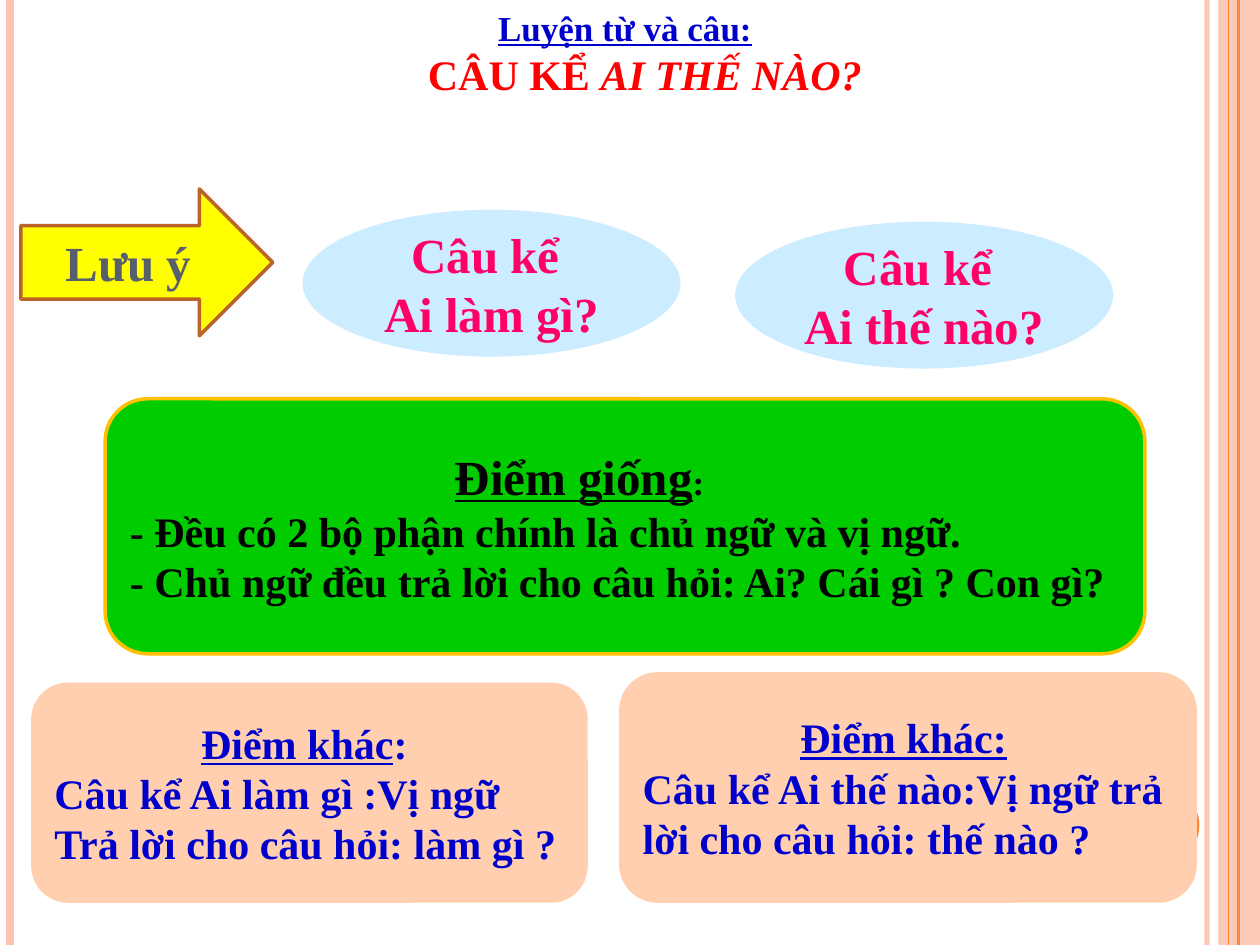
from lxml import etree
from pptx import Presentation
from pptx.dml.color import RGBColor
from pptx.enum.shapes import MSO_CONNECTOR, MSO_SHAPE
from pptx.enum.text import MSO_ANCHOR, MSO_AUTO_SIZE, PP_ALIGN
from pptx.oxml.ns import qn
from pptx.util import Cm, Pt

STRAIGHT = MSO_CONNECTOR.STRAIGHT
RECT, OVAL = MSO_SHAPE.RECTANGLE, MSO_SHAPE.OVAL
ROUND, ARROW = MSO_SHAPE.ROUNDED_RECTANGLE, MSO_SHAPE.RIGHT_ARROW
MIDDLE, TOP = MSO_ANCHOR.MIDDLE, MSO_ANCHOR.TOP
LEFT, CENTER = PP_ALIGN.LEFT, PP_ALIGN.CENTER

THEME = {
    "font": "Times New Roman",
    "small": 20, "normal": 24, "large": 28,
    "orange": "FE8637", "pale_orange": "FEC3AE", "brown": "BC6329",
    "yellow": "FFFF00", "gold": "FFC000", "green": "00CC00",
    "peach": "FFCFAF", "sky": "CCECFF", "pink": "FF0066",
    "blue": "0000CC", "red": "FF0000", "grey": "575F6D", "black": "000000",
}


def add_block(kind, box, fill, line=None):
    sp = s.shapes.add_shape(kind, *[Cm(v) for v in box])
    sp.shadow.inherit = False
    sp.fill.solid()
    sp.fill.fore_color.rgb = RGBColor.from_string(THEME[fill])
    if line:
        sp.line.color.rgb = RGBColor.from_string(THEME[line])
        sp.line.width = Pt(2)
    else:
        sp.line.fill.background()
    return sp


def write(sp, lines, align, anchor=MIDDLE):
    tf = sp.text_frame
    tf.word_wrap = True
    tf.auto_size = MSO_AUTO_SIZE.NONE
    tf.vertical_anchor = anchor
    for i, (indent, runs) in enumerate(lines):
        p = tf.add_paragraph() if i else tf.paragraphs[0]
        p.alignment = align
        if indent:
            name = "marL" if align == CENTER else "indent"
            p._p.get_or_add_pPr().set(name, str(Cm(indent)))
        for text, size, color, style in runs:
            r = p.add_run()
            r.text = text
            r.font.name = THEME["font"]
            r.font.size = Pt(THEME[size])
            r.font.color.rgb = RGBColor.from_string(THEME[color])
            r.font.bold = True
            r.font.underline = "u" in style
            r.font.italic = "i" in style


prs = Presentation()
prs.slide_width, prs.slide_height = Cm(25.4), Cm(19.05)
s = prs.slides.add_slide(prs.slide_layouts[5])

title = s.shapes.title
title.left, title.top, title.width, title.height = Cm(1.7), Cm(0), Cm(21.8), Cm(2.13)
write(title, [
    (0, [("Luyện từ và câu:", "small", "blue", "u")]),
    (0.8, [("CÂU KỂ ", "normal", "red", ""), ("AI THẾ NÀO?", "normal", "red", "i")]),
], CENTER, TOP)

band = add_block(RECT, (24.56, 0, 0.84, 19.05), "pale_orange")
stripes = [(24.33, "pale_orange", 3), (0.2, "pale_orange", 4.5),
           (24.97, "orange", 1.5), (24.77, "orange", 0.75)]
lines = []
for x, color, width in stripes:
    line = s.shapes.add_connector(STRAIGHT, Cm(x), Cm(0), Cm(x), prs.slide_height)
    line.line.color.rgb = RGBColor.from_string(THEME[color])
    line.line.width = Pt(width)
    etree.SubElement(line._element.spPr, qn("a:effectLst"))
    lines.append(line)
for sp, alpha in [(band, 87000), (lines[0], 93000)]:
    clr = next(sp._element.spPr.iter(qn("a:srgbClr")))
    etree.SubElement(clr, qn("a:alpha")).set("val", str(alpha))

add_block(OVAL, (22.66, 15.88, 1.52, 1.52), "orange")

arrow = add_block(ARROW, (0.42, 3.81, 5.08, 2.96), "yellow", "brown")
write(arrow, [(0, [("Lưu ý", "large", "grey", "")])], CENTER)

for x, y, question in [(6.1, 4.23, "Ai làm gì?"), (14.82, 4.47, "Ai thế nào?")]:
    oval = add_block(OVAL, (x, y, 7.62, 2.96), "sky")
    write(oval, [(0, [(text, "large", "pink", "")]) for text in ("Câu kể ", question)], CENTER)

common = add_block(ROUND, (2.12, 8.04, 20.96, 5.14), "green", "gold")
write(common, [
    (6.55, [("Điểm giống", "large", "black", "u"), (":", "small", "black", "")]),
    (0, [("- Đều có 2 bộ phận chính là chủ ngữ và vị ngữ.", "normal", "black", "")]),
    (0, [("- Chủ ngữ đều trả lời cho câu hỏi: Ai? Cái gì ? Con gì?", "normal", "black", "")]),
], LEFT)

differences = [
    ((12.48, 13.55, 11.65, 4.65), 3.18, "u",
     "Câu kể Ai thế nào:Vị ngữ trả lời cho câu hỏi: thế nào ?"),
    ((0.63, 13.76, 11.22, 4.44), 2.96, "",
     "Câu kể Ai làm gì :Vị ngữ Trả lời cho câu hỏi: làm gì ?"),
]
for box, indent, colon_style, text in differences:
    card = add_block(ROUND, box, "peach")
    write(card, [
        (indent, [("Điểm khác", "normal", "blue", "u"), (":", "normal", "blue", colon_style)]),
        (0, [(text, "normal", "blue", "")]),
    ], LEFT)

prs.save("out.pptx")
